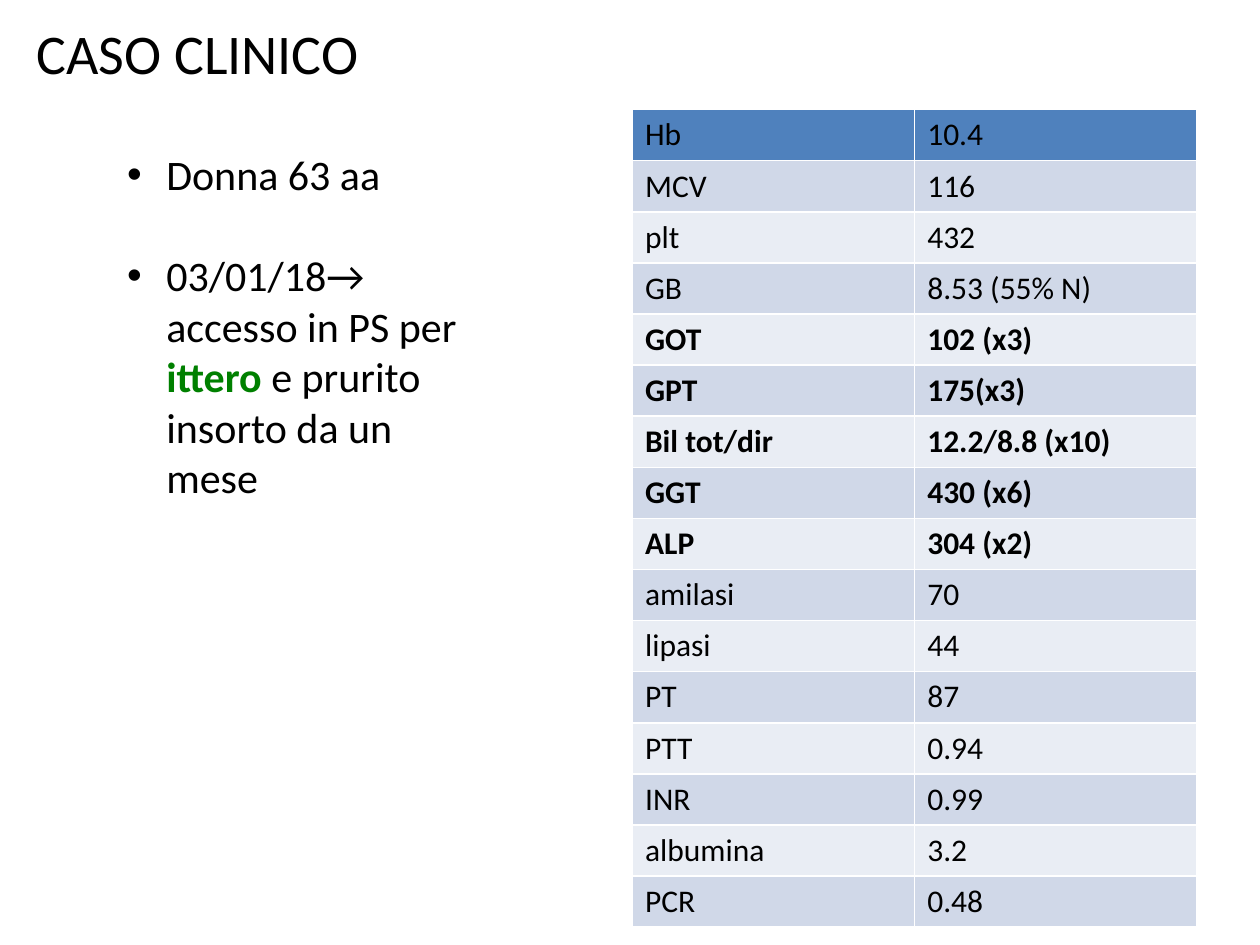
from dataclasses import dataclass

from pptx import Presentation
from pptx.dml.color import RGBColor
from pptx.enum.text import MSO_ANCHOR, MSO_AUTO_SIZE, PP_ALIGN
from pptx.util import Inches, Pt

TOP = MSO_ANCHOR.TOP
LEFT = PP_ALIGN.LEFT
NO_AUTOFIT = MSO_AUTO_SIZE.NONE
TITLE_AND_CONTENT = 1


@dataclass(frozen=True)
class Theme:
    font: str = "Calibri"
    text: RGBColor = RGBColor(0x00, 0x00, 0x00)
    accent: RGBColor = RGBColor(0x00, 0x80, 0x00)
    header: RGBColor = RGBColor(0x4F, 0x81, 0xBD)
    bands: tuple = (RGBColor(0xD0, 0xD8, 0xE8), RGBColor(0xE9, 0xED, 0xF4))
    title_size: int = 32
    body_size: int = 24
    table_size: int = 18


THEME = Theme()

HISTORY = [
    [("Donna 63 aa", False)],
    [
        ("03/01/18→ accesso in PS per ", False),
        ("ittero", True),
        (" e prurito insorto da un mese", False),
    ],
]

LAB_RESULTS = [
    ("Hb", "10.4"),
    ("MCV", "116"),
    ("plt", "432"),
    ("GB", "8.53 (55% N)"),
    ("GOT", "102 (x3)"),
    ("GPT", "175(x3)"),
    ("Bil tot/dir", "12.2/8.8 (x10)"),
    ("GGT", "430 (x6)"),
    ("ALP", "304 (x2)"),
    ("amilasi", "70"),
    ("lipasi", "44"),
    ("PT", "87"),
    ("PTT", "0.94"),
    ("INR", "0.99"),
    ("albumina", "3.2"),
    ("PCR", "0.48"),
]
ABNORMAL = {"GOT", "GPT", "Bil tot/dir", "GGT", "ALP"}


def style_paragraph(para, size, bold=False):
    para.font.name = THEME.font
    para.font.size = Pt(size)
    para.font.bold = bold
    para.font.color.rgb = THEME.text


def place(box, left, top, width, height):
    box.left, box.top = Inches(left), Inches(top)
    box.width, box.height = Inches(width), Inches(height)
    frame = box.text_frame
    frame.word_wrap = True
    frame.auto_size = NO_AUTOFIT
    frame.vertical_anchor = TOP
    return frame


def fill_title(box, text):
    frame = place(box, 0.19, 0.1, 3.24, 0.64)
    frame.text = text
    para = frame.paragraphs[0]
    para.alignment = LEFT
    style_paragraph(para, THEME.title_size)


def fill_history(box, items):
    frame = place(box, 0.91, 1.13, 3.05, 3.33)
    for index, item in enumerate(items):
        para = frame.add_paragraph() if index else frame.paragraphs[0]
        properties = para._p.get_or_add_pPr()
        properties.set("marL", str(Inches(0.31)))
        properties.set("indent", str(-Inches(0.31)))
        para.space_before = Pt(29 if index else 0)
        style_paragraph(para, THEME.body_size)
        for text, highlighted in item:
            span = para.add_run()
            span.text = text
            if highlighted:
                span.font.bold = True
                span.font.color.rgb = THEME.accent


def add_lab_table(page, results):
    table = page.shapes.add_table(
        len(results), 2, Inches(5.02), Inches(0.87), Inches(4.48), Inches(6.4)
    ).table
    for row, result in enumerate(results):
        color = THEME.bands[(row - 1) % 2] if row else THEME.header
        for column, text in enumerate(result):
            cell = table.cell(row, column)
            cell.text = text
            cell.fill.solid()
            cell.fill.fore_color.rgb = color
            style_paragraph(
                cell.text_frame.paragraphs[0],
                THEME.table_size,
                result[0] in ABNORMAL,
            )


def main():
    deck = Presentation()
    deck.slide_width, deck.slide_height = Inches(10), Inches(7.5)
    page = deck.slides.add_slide(deck.slide_layouts[TITLE_AND_CONTENT])
    fill_title(page.shapes.title, "CASO CLINICO")
    fill_history(page.placeholders[1], HISTORY)
    add_lab_table(page, LAB_RESULTS)
    deck.save("out.pptx")


if __name__ == "__main__":
    main()
